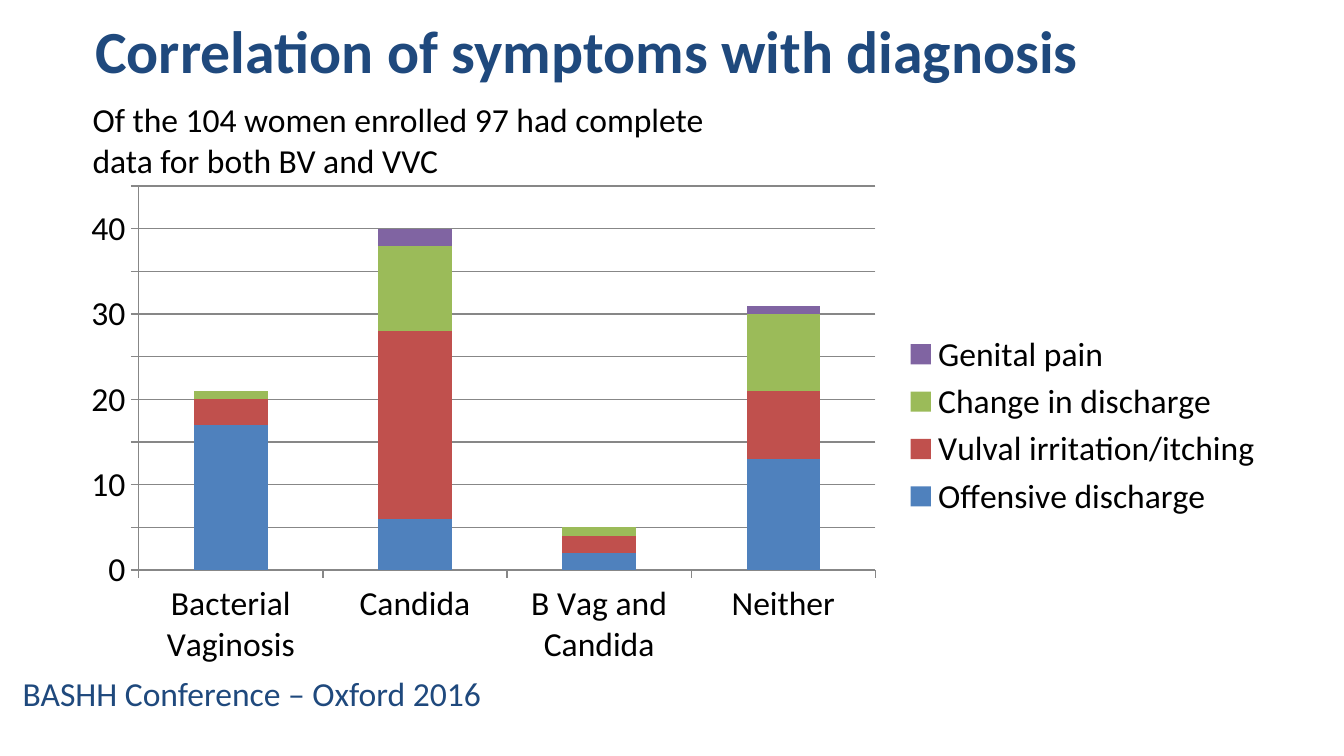
from pptx import Presentation
from pptx.chart import data
from pptx.dml import color
from pptx.enum import chart as charts, text
from pptx.util import Cm, Pt

THEME = {
    "font": "Calibri",
    "navy": "1F497D",
    "black": "000000",
    "grid": "878787",
    "title": 32,
    "body": 18,
}

TITLE = "Correlation of symptoms with diagnosis"
SAMPLE = "Of the 104 women enrolled 97 had complete data for both BV and VVC"
CONFERENCE = "BASHH Conference – Oxford 2016"

DIAGNOSES = ["Bacterial Vaginosis", "Candida", "B Vag and Candida", "Neither"]
SYMPTOMS = [
    ("Offensive discharge", (17, 6, 2, 13), "4F81BD"),
    ("Vulval irritation/itching", (3, 22, 2, 8), "C0504D"),
    ("Change in discharge", (1, 10, 1, 9), "9BBB59"),
    ("Genital pain", (0, 2, 0, 1), "8064A2"),
]

# left, top, width, height in centimetres
TITLE_BOX = (1.3, 0.36, 22.86, 1.17)
SAMPLE_BOX = (1.5, 1.75, 13.31, 1.8)
CHART_BOX = (1.27, 3.33, 22.86, 9.42)
CONFERENCE_BOX = (0.18, 12.6, 12.14, 1.75)


def rgb(name):
    return color.RGBColor.from_string(THEME.get(name, name))


def style_font(font, size, tint, bold=False):
    font.name = THEME["font"]
    font.size = Pt(THEME[size])
    font.bold = bold
    font.color.rgb = rgb(tint)


def write(shape, words, size, tint, bold=False):
    frame = shape.text_frame
    frame.word_wrap = True
    frame.auto_size = text.MSO_AUTO_SIZE.NONE
    frame.text = words
    paragraph = frame.paragraphs[0]
    paragraph.alignment = text.PP_ALIGN.LEFT
    style_font(paragraph.runs[0].font, size, tint, bold)


def add_symptom_chart(slide):
    counts = data.CategoryChartData()
    counts.categories = DIAGNOSES
    for symptom, values, _ in SYMPTOMS:
        counts.add_series(symptom, values)
    chart = slide.shapes.add_chart(
        charts.XL_CHART_TYPE.COLUMN_STACKED, *map(Cm, CHART_BOX), counts
    ).chart
    style_font(chart.font, "body", "black")
    chart.has_title = False
    chart.has_legend = True
    chart.legend.position = charts.XL_LEGEND_POSITION.RIGHT
    chart.legend.include_in_layout = False

    plot = chart.plots[0]
    plot.gap_width = 150
    plot.overlap = 100
    plot.vary_by_categories = False
    for series, (_, _, tint) in zip(plot.series, SYMPTOMS):
        series.format.fill.solid()
        series.format.fill.fore_color.rgb = rgb(tint)

    women = chart.value_axis
    women.minimum_scale, women.maximum_scale, women.major_unit = 0, 45, 5
    women.has_major_gridlines = True
    for axis in (women, chart.category_axis):
        axis.major_tick_mark = charts.XL_TICK_MARK.OUTSIDE
        axis.minor_tick_mark = charts.XL_TICK_MARK.NONE
    for part in (women, chart.category_axis, women.major_gridlines):
        part.format.line.color.rgb = rgb("grid")
        part.format.line.width = Pt(0.75)


def main():
    deck = Presentation()
    deck.slide_width, deck.slide_height = Cm(25.4), Cm(14.29)
    slide = deck.slides.add_slide(deck.slide_layouts[5])

    title = slide.shapes.title
    title.left, title.top, title.width, title.height = map(Cm, TITLE_BOX)
    write(title, TITLE, "title", "navy", bold=True)
    title.text_frame.margin_left = Cm(0.5)
    title.text_frame.vertical_anchor = text.MSO_ANCHOR.MIDDLE

    add_symptom_chart(slide)
    for box, words, tint in (
        (SAMPLE_BOX, SAMPLE, "black"),
        (CONFERENCE_BOX, CONFERENCE, "navy"),
    ):
        write(slide.shapes.add_textbox(*map(Cm, box)), words, "body", tint)

    deck.save("out.pptx")


if __name__ == "__main__":
    main()
